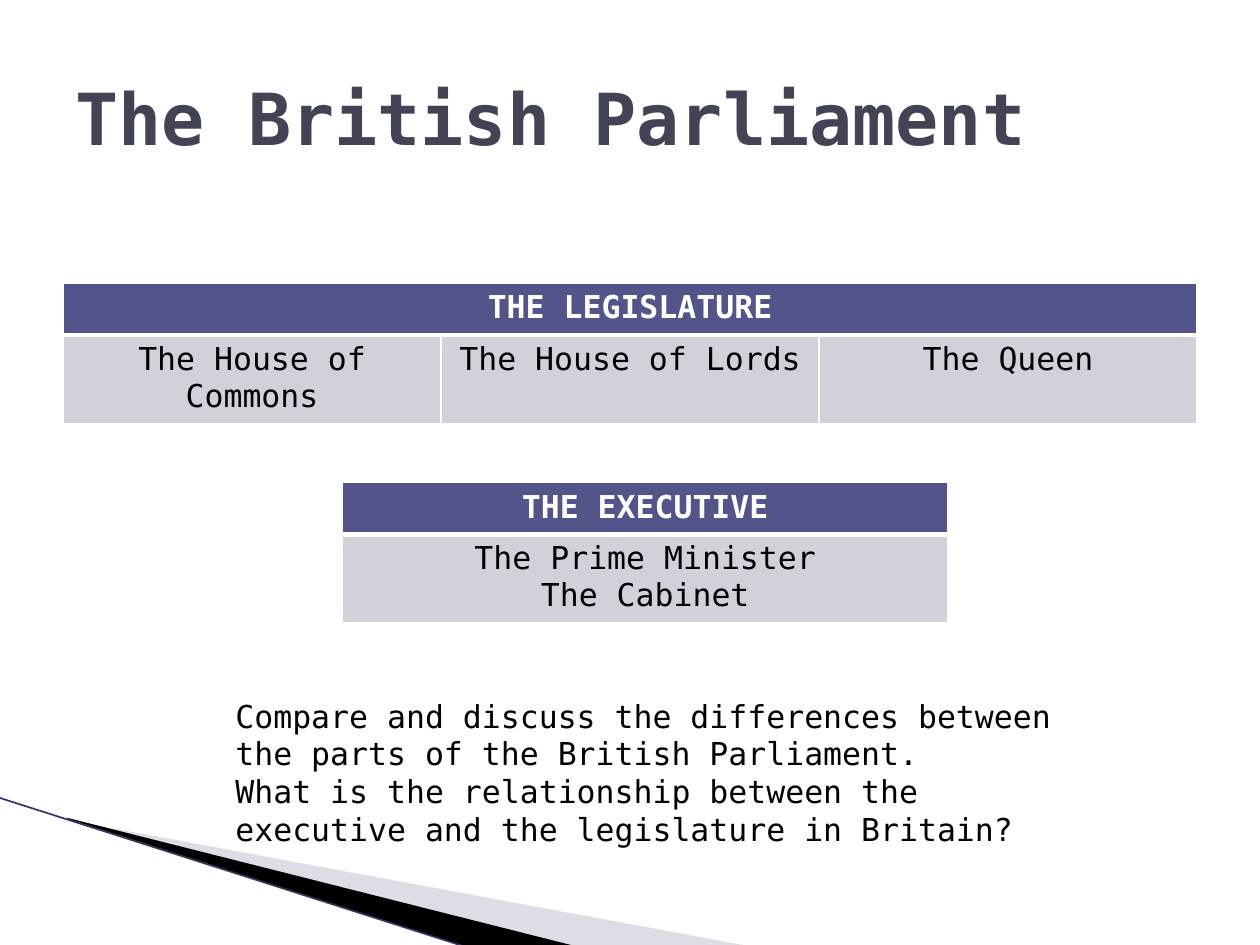
"""Build a slide that sets out the parts of the British Parliament."""
from dataclasses import dataclass

from lxml import etree
from pptx import Presentation
from pptx import util as u
from pptx.dml.color import RGBColor
from pptx.enum import shapes, text
from pptx.oxml.ns import qn

PX = 9144
FONT = "DejaVu Sans Mono"
WHITE, BLACK = "FFFFFF", "000000"
HEADER, BODY = "53548A", "D1D1DA"
HEADER_HEIGHT, BODY_HEIGHT = 41, 70


@dataclass(frozen=True)
class Box:
    left: int
    top: int
    width: int
    height: int

    def emu(self) -> list[int]:
        return [px(side) for side in (self.left, self.top, self.width, self.height)]


@dataclass(frozen=True)
class Style:
    size: int
    color: str
    bold: bool = False
    align: text.PP_ALIGN = text.PP_ALIGN.LEFT


@dataclass(frozen=True)
class Branch:
    box: Box
    name: str
    members: list[list[str]]


@dataclass(frozen=True)
class Wedge:
    points: list[tuple[int, int]]
    color: str
    opacity: int = 100


TITLE = Style(41, "424456", bold=True)
NOTE = Style(18, BLACK)
HEADING = Style(18, WHITE, bold=True, align=text.PP_ALIGN.CENTER)
MEMBER = Style(18, BLACK, align=text.PP_ALIGN.CENTER)

WEDGES = [
    Wedge([(55, 651), (595, 751), (456, 751), (55, 650)], "AAAABF", 40),
    Wedge([(53, 649), (457, 751), (372, 752), (54, 650)], BLACK),
]
BRANCHES = [
    Branch(Box(50, 225, 900, 111), "THE LEGISLATURE",
           [["The House of Commons"], ["The House of Lords"], ["The Queen"]]),
    Branch(Box(272, 383, 480, 111), "THE EXECUTIVE",
           [["The Prime Minister", "The Cabinet"]]),
]
QUESTIONS = [
    "Compare and discuss the differences between the parts of the British Parliament.",
    "What is the relationship between the executive and the legislature in Britain?",
]


def px(length: int) -> u.Emu:
    return u.Emu(length * PX)


def rgb(color: str) -> RGBColor:
    return RGBColor.from_string(color)


def write(frame, lines: list[str], style: Style) -> None:
    for index, line in enumerate(lines):
        para = frame.add_paragraph() if index else frame.paragraphs[0]
        para.alignment = style.align
        span = para.add_run()
        span.text = line
        span.font.name = FONT
        span.font.size = u.Pt(style.size)
        span.font.bold = style.bold
        span.font.color.rgb = rgb(style.color)


def add_text(page, box: Box, lines: list[str], style: Style, anchor) -> None:
    frame = page.shapes.add_textbox(*box.emu()).text_frame
    frame.word_wrap = True
    frame.vertical_anchor = anchor
    write(frame, lines, style)


def add_wedge(page, wedge: Wedge) -> None:
    start, *rest = wedge.points
    builder = page.shapes.build_freeform(*start, scale=PX)
    builder.add_line_segments(rest, close=True)
    shape = builder.convert_to_shape()
    shape.shadow.inherit = False
    shape.line.fill.background()
    shape.fill.solid()
    shape.fill.fore_color.rgb = rgb(wedge.color)
    if wedge.opacity < 100:
        color = shape.fill._xPr.find(".//" + qn("a:srgbClr"))
        etree.SubElement(color, qn("a:alpha"), val=str(wedge.opacity * 1000))


def add_edge(page, start: tuple[int, int], end: tuple[int, int], color: str) -> None:
    edge = page.shapes.add_connector(
        shapes.MSO_CONNECTOR.STRAIGHT, *map(px, start + end))
    edge.line.color.rgb = rgb(color)
    edge.line.width = u.Pt(0.95)
    etree.SubElement(edge._element.spPr, qn("a:effectLst"))


def paint_cell(cell, fill: str, widths: dict[str, int]) -> None:
    properties = cell._tc.get_or_add_tcPr()
    for side, width in widths.items():
        line = etree.SubElement(properties, qn(f"a:ln{side}"), w=str(u.Pt(width)))
        solid = etree.SubElement(line, qn("a:solidFill"))
        etree.SubElement(solid, qn("a:srgbClr"), val=WHITE)
    cell.fill.solid()
    cell.fill.fore_color.rgb = rgb(fill)


def add_branch(page, branch: Branch) -> None:
    count = len(branch.members)
    table = page.shapes.add_table(2, count, *branch.box.emu()).table
    table.rows[0].height = px(HEADER_HEIGHT)
    table.rows[1].height = px(BODY_HEIGHT)
    for index, lines in enumerate(branch.members):
        table.columns[index].width = px(branch.box.width // count)
        paint_cell(table.cell(0, index), HEADER, {"L": 1, "R": 1, "T": 1, "B": 3})
        paint_cell(table.cell(1, index), BODY, {"L": 1, "R": 1, "T": 3, "B": 1})
        write(table.cell(1, index).text_frame, lines, MEMBER)
    if count > 1:
        table.cell(0, 0).merge(table.cell(0, count - 1))
    write(table.cell(0, 0).text_frame, [branch.name], HEADING)


def main() -> None:
    deck = Presentation()
    deck.slide_width, deck.slide_height = px(1000), px(750)
    page = deck.slides.add_slide(deck.slide_layouts[6])
    for wedge in WEDGES:
        add_wedge(page, wedge)
    add_edge(page, (-1, 633), (371, 752), "36355F")
    add_text(page, Box(50, 30, 900, 125), ["The British Parliament"], TITLE,
             text.MSO_ANCHOR.MIDDLE)
    for branch in BRANCHES:
        add_branch(page, branch)
    add_text(page, Box(177, 548, 693, 131), QUESTIONS, NOTE, text.MSO_ANCHOR.TOP)
    deck.save("out.pptx")


if __name__ == "__main__":
    main()
